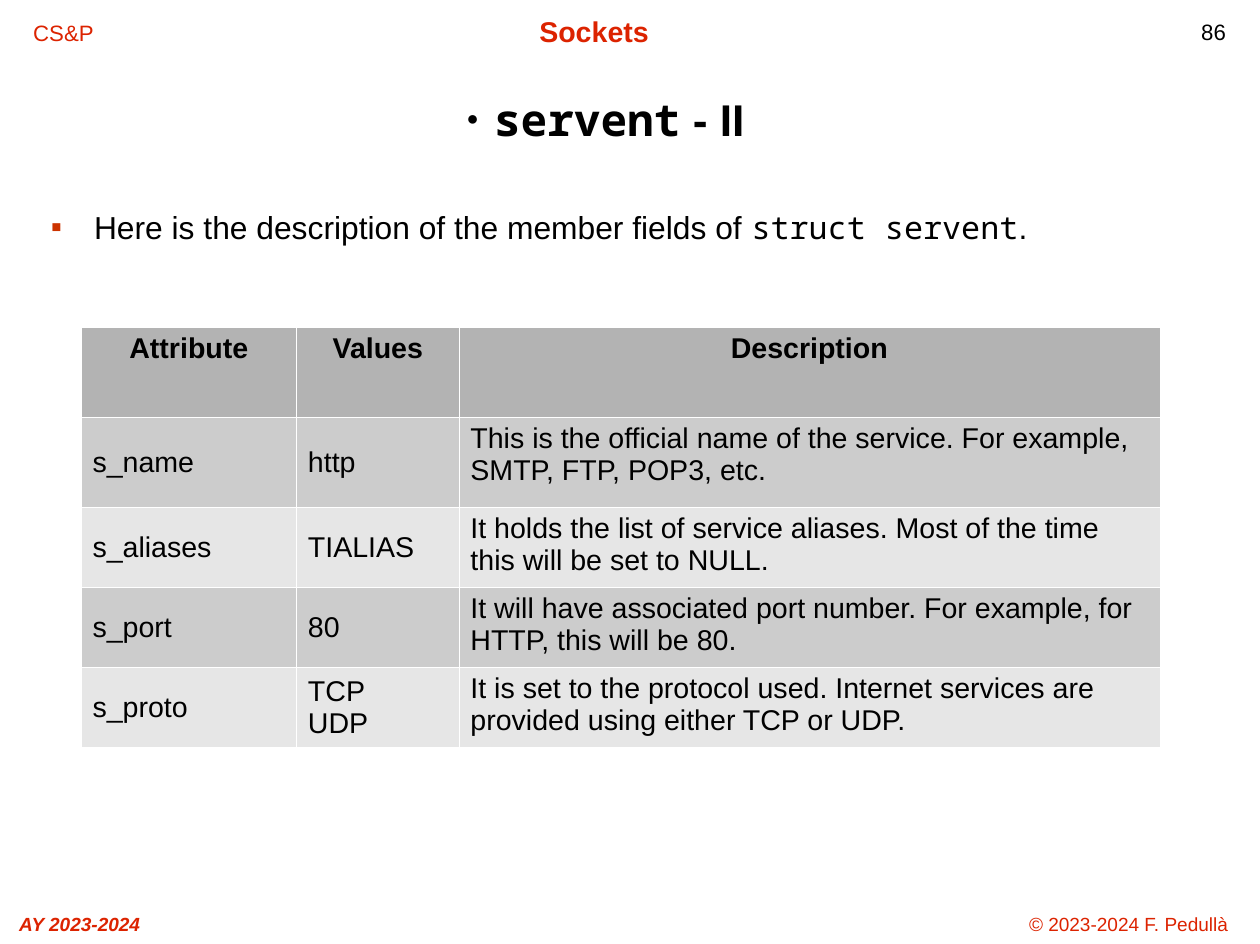
from lxml.etree import SubElement
from pptx import Presentation
from pptx.dml.color import RGBColor
from pptx.enum.text import MSO_ANCHOR, PP_ALIGN
from pptx.oxml.ns import qn
from pptx.util import Pt

SLIDE_WIDTH, SLIDE_HEIGHT = 794, 595
RED, BLACK, WHITE = "DC2300", "000000", "FFFFFF"
HEADER_FILL, BAND_FILLS = "B3B3B3", ("CCCCCC", "E6E6E6")
SANS, MONO = "Arial", "Noto Sans Mono"

COLUMN_WIDTHS = (135.8, 102.4, 441.5)
ROW_HEIGHTS = (56.8, 56.8, 36.8, 38.9, 38.9)
ROWS = (
    ("Attribute", "Values", "Description"),
    ("s_name", "http",
     "This is the official name of the service. For example, SMTP, FTP, POP3, etc."),
    ("s_aliases", "TIALIAS",
     "It holds the list of service aliases. Most of the time this will be set to NULL."),
    ("s_port", "80",
     "It will have associated port number. For example, for HTTP, this will be 80."),
    ("s_proto", "TCP\nUDP",
     "It is set to the protocol used. Internet services are provided using either TCP or UDP."),
)


def color(value):
    return RGBColor.from_string(value)


def add_span(para, text, size=18, fill=BLACK, face=SANS, bold=False, italic=False):
    span = para.add_run()
    span.text = text
    font = span.font
    font.size, font.name, font.bold, font.italic = Pt(size), face, bold, italic
    font.color.rgb = color(fill)


def add_box(page, left, top, width, height, anchor=MSO_ANCHOR.TOP, align=PP_ALIGN.CENTER):
    """Add a wrapping text box and return its first paragraph."""
    frame = page.shapes.add_textbox(Pt(left), Pt(top), Pt(width), Pt(height)).text_frame
    frame.word_wrap = True
    frame.vertical_anchor = anchor
    para = frame.paragraphs[0]
    para.alignment = align
    return para


def add_bullet(para, mark, fill, indent, percent=100):
    props = para._p.get_or_add_pPr()
    props.set("marL", str(Pt(indent)))
    props.set("indent", str(-Pt(indent)))
    SubElement(SubElement(props, qn("a:buClr")), qn("a:srgbClr"), val=fill)
    SubElement(props, qn("a:buSzPct"), val=str(percent * 1000))
    SubElement(props, qn("a:buFont"), typeface=SANS)
    SubElement(props, qn("a:buChar"), char=mark)


def add_header(page, left, top, width):
    add_span(add_box(page, left + 9.4, top + 8.6, 61.2, 24), "CS&P", size=14, fill=RED)
    add_span(add_box(page, left + 266.4, top + 5, 216, 24), "Sockets", fill=RED, bold=True)
    add_span(add_box(page, left + width - 71, top + 7.7, 83.5, 28), "86", size=14)


def add_footer(page, left, top, width):
    add_span(add_box(page, left - 30.4, top, 161.3, 24), "AY 2023-2024",
             size=12, fill=RED, bold=True, italic=True)
    add_span(add_box(page, left + width - 165.2, top, 164.9, 24), "© 2023-2024 F. Pedullà",
             size=12, fill=RED)


def add_title(page, left, top, width, height):
    para = add_box(page, left, top, width, height, anchor=MSO_ANCHOR.MIDDLE)
    add_bullet(para, "●", BLACK, 17.3, percent=45)
    add_span(para, "servent", size=28, face=MONO, bold=True)
    add_span(para, " - II", size=28, bold=True)


def add_body(page, left, top, width, height):
    para = add_box(page, left, top, width, height, align=PP_ALIGN.LEFT)
    add_bullet(para, "▪", "CC3300", 27.2)
    add_span(para, "Here is the description of the member fields of ", size=20)
    add_span(para, "struct servent", size=20, face=MONO)
    add_span(para, ".", size=20)


def style_cell(cell, fill):
    """Give a cell thin white borders and a plain fill."""
    props = cell._tc.get_or_add_tcPr()
    for side in ("lnL", "lnR", "lnT", "lnB"):
        line = SubElement(props, qn(f"a:{side}"), w=str(Pt(0.06)))
        SubElement(SubElement(line, qn("a:solidFill")), qn("a:srgbClr"), val=WHITE)
    cell.fill.solid()
    cell.fill.fore_color.rgb = color(fill)
    cell.margin_left = cell.margin_right = Pt(7.2)
    cell.margin_top = cell.margin_bottom = Pt(3.6)


def add_field_table(page, left, top):
    table = page.shapes.add_table(
        len(ROWS), len(COLUMN_WIDTHS), Pt(left), Pt(top),
        Pt(sum(COLUMN_WIDTHS)), Pt(sum(ROW_HEIGHTS))).table
    table.horz_banding = False
    for column, width in zip(table.columns, COLUMN_WIDTHS):
        column.width = Pt(width)
    for number, (row, height, texts) in enumerate(zip(table.rows, ROW_HEIGHTS, ROWS)):
        row.height = Pt(height)
        is_header = number == 0
        fill = HEADER_FILL if is_header else BAND_FILLS[(number - 1) % 2]
        for cell, text, heading in zip(row.cells, texts, ROWS[0]):
            style_cell(cell, fill)
            at_top = is_header or heading == "Description"
            cell.vertical_anchor = MSO_ANCHOR.TOP if at_top else MSO_ANCHOR.MIDDLE
            frame = cell.text_frame
            for index, line in enumerate(text.split("\n")):
                para = frame.add_paragraph() if index else frame.paragraphs[0]
                para.alignment = PP_ALIGN.CENTER if is_header else PP_ALIGN.LEFT
                add_span(para, line, bold=is_header)


def main():
    deck = Presentation()
    deck.slide_width, deck.slide_height = Pt(SLIDE_WIDTH), Pt(SLIDE_HEIGHT)
    page = deck.slides.add_slide(deck.slide_layouts[6])
    add_header(page, 0, 0, SLIDE_WIDTH)
    add_footer(page, 0, SLIDE_HEIGHT - 23.7, SLIDE_WIDTH)
    add_title(page, 31, 35.3, 701.3, 79.2)
    add_body(page, 25, 127.4, 712, 411)
    add_field_table(page, 51.1, 206.2)
    deck.save("out.pptx")


if __name__ == "__main__":
    main()
